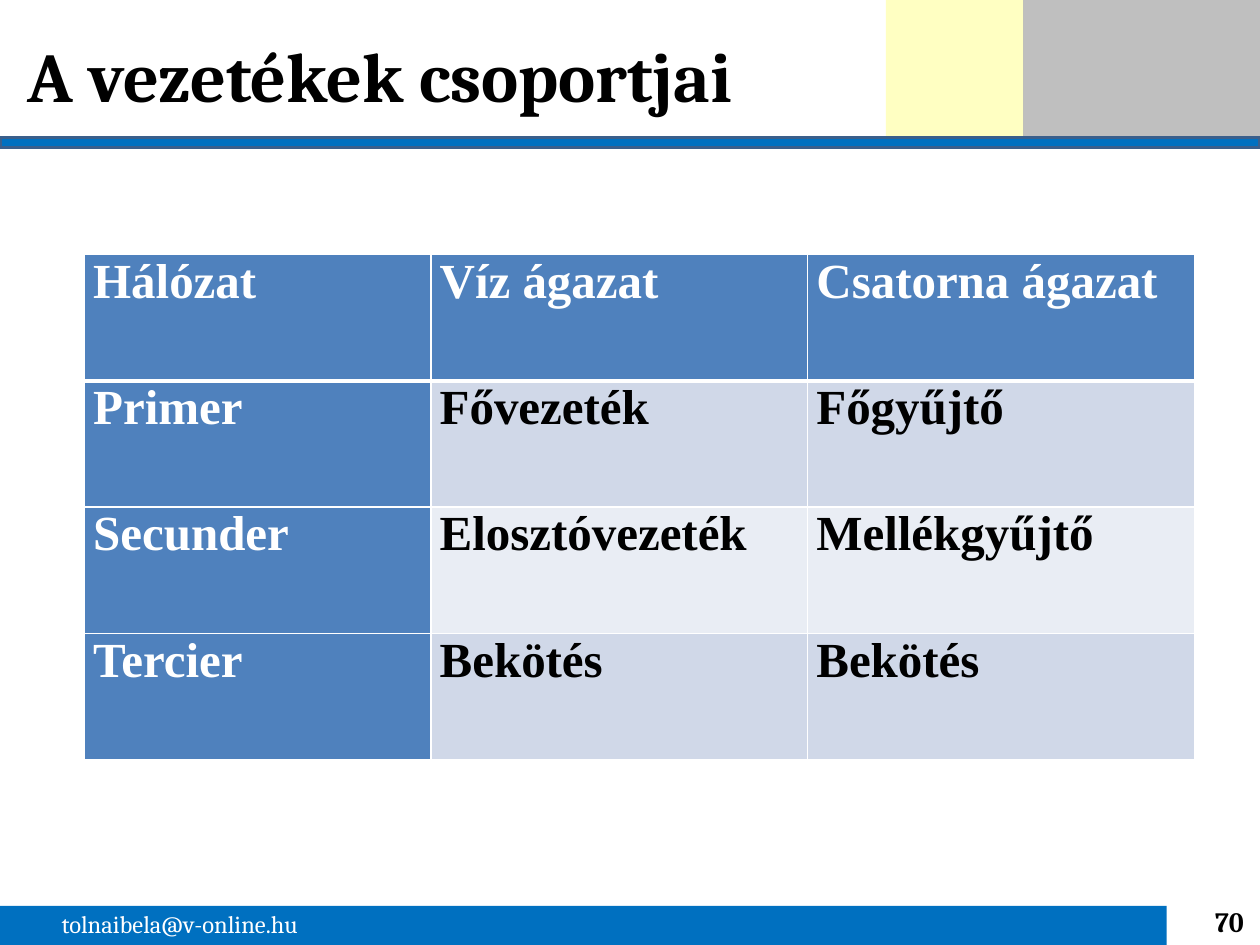
"""Build a slide with a table of the pipeline groups in water and sewer networks."""
from lxml import etree
from pptx import Presentation
from pptx import util as u
from pptx.dml.color import RGBColor
from pptx.enum import shapes, text
from pptx.oxml import ns

COLORS = {
    "blue": "0070C0", "edge": "3A5F8C", "grey": "BFBFBF", "yellow": "FFFF00",
    "head": "4F81BD", "band": "D0D8E8", "light": "E9EDF4",
    "white": "FFFFFF", "black": "000000",
}
ROWS = [
    ["Hálózat", "Víz ágazat", "Csatorna ágazat"],
    ["Primer", "Fővezeték", "Főgyűjtő"],
    ["Secunder", "Elosztóvezeték", "Mellékgyűjtő"],
    ["Tercier", "Bekötés", "Bekötés"],
]
COL_WIDTHS = [2.75, 2.99, 3.07]


def rgb(name):
    return RGBColor.from_string(COLORS[name])


def write(tf, words, size, color, font="Cambria", bold=True, align=text.PP_ALIGN.LEFT):
    p = tf.paragraphs[0]
    p.alignment = align
    r = p.add_run()
    r.text = words
    for name, value in {"name": font, "size": u.Pt(size), "bold": bold}.items():
        setattr(r.font, name, value)
    r.font.color.rgb = rgb(color)
    return p


def add_bar(s, box, fill, line=None, alpha=None):
    sp = s.shapes.add_shape(shapes.MSO_SHAPE.RECTANGLE, *map(u.Inches, box))
    sp.shadow.inherit = False
    sp.fill.solid()
    sp.fill.fore_color.rgb = rgb(fill)
    if line:
        sp.line.color.rgb = rgb(line)
        sp.line.width = u.Pt(2)
    else:
        sp.line.fill.background()
    if alpha:
        clr = sp.fill._xPr.find(".//" + ns.qn("a:srgbClr"))
        etree.SubElement(clr, ns.qn("a:alpha"), val=str(alpha * 1000))


def add_label(s, box, words, size, color, **style):
    tf = s.shapes.add_textbox(*map(u.Inches, box)).text_frame
    tf.word_wrap = True
    tf.vertical_anchor = text.MSO_ANCHOR.MIDDLE
    write(tf, words, size, color, **style)


def set_title(s, box, words):
    sp = s.shapes.title
    for name, value in zip(("left", "top", "width", "height"), box):
        setattr(sp, name, u.Inches(value))
    sp.text_frame.vertical_anchor = text.MSO_ANCHOR.MIDDLE
    write(sp.text_frame, words, 40, "black")


def set_borders(cell, widths):
    tc_pr = cell._tc.get_or_add_tcPr()
    for i, (side, width) in enumerate(widths.items()):
        ln = etree.Element(ns.qn("a:ln" + side), w=str(u.Pt(width)))
        fill = etree.SubElement(ln, ns.qn("a:solidFill"))
        etree.SubElement(fill, ns.qn("a:srgbClr"), val=COLORS["white"])
        tc_pr.insert(i, ln)


def fill_cell(cell, words, row, col):
    is_head = row == 0 or col == 0
    cell.fill.solid()
    cell.fill.fore_color.rgb = rgb("head" if is_head else "band" if row % 2 else "light")
    margins = {"margin_left": 0.07, "margin_right": 0.07, "margin_top": 0, "margin_bottom": 0}
    for name, value in margins.items():
        setattr(cell, name, u.Inches(value))
    p = write(cell.text_frame, words, 28, "white" if is_head else "black",
              font="Times New Roman", align=text.PP_ALIGN.JUSTIFY)
    p.space_before = u.Pt(6)
    set_borders(cell, {"L": 1, "R": 1, "T": 3 if row == 1 else 1, "B": 3 if row == 0 else 1})


def add_groups_table(s, box):
    table = s.shapes.add_table(len(ROWS), len(COL_WIDTHS), *map(u.Inches, box)).table
    table.first_col = True
    for column, width in zip(table.columns, COL_WIDTHS):
        column.width = u.Inches(width)
    for i, row in enumerate(ROWS):
        for j, words in enumerate(row):
            fill_cell(table.cell(i, j), words, i, j)


def main():
    prs = Presentation()
    prs.slide_width, prs.slide_height = u.Inches(10), u.Inches(7.5)
    s = prs.slides.add_slide(prs.slide_layouts[5])
    add_bar(s, (-0.04, 7.19, 9.3, 0.31), "blue")
    add_label(s, (9.3, 7.11, 0.67, 0.4), "70", 16, "black", align=text.PP_ALIGN.RIGHT)
    add_label(s, (0.39, 7.16, 2.73, 0.34), "tolnaibela@v-online.hu", 14, "white", bold=False)
    add_bar(s, (8.12, 0, 1.88, 1.09), "grey")
    add_bar(s, (7.03, 0, 1.09, 1.09), "yellow", alpha=24)
    add_bar(s, (0, 1.09, 10, 0.08), "blue", line="edge")
    set_title(s, (0.12, 0.16, 9.53, 0.86), "A vezetékek csoportjai")
    add_groups_table(s, (0.67, 2.02, 8.81, 4.01))
    prs.save("out.pptx")


if __name__ == "__main__":
    main()
